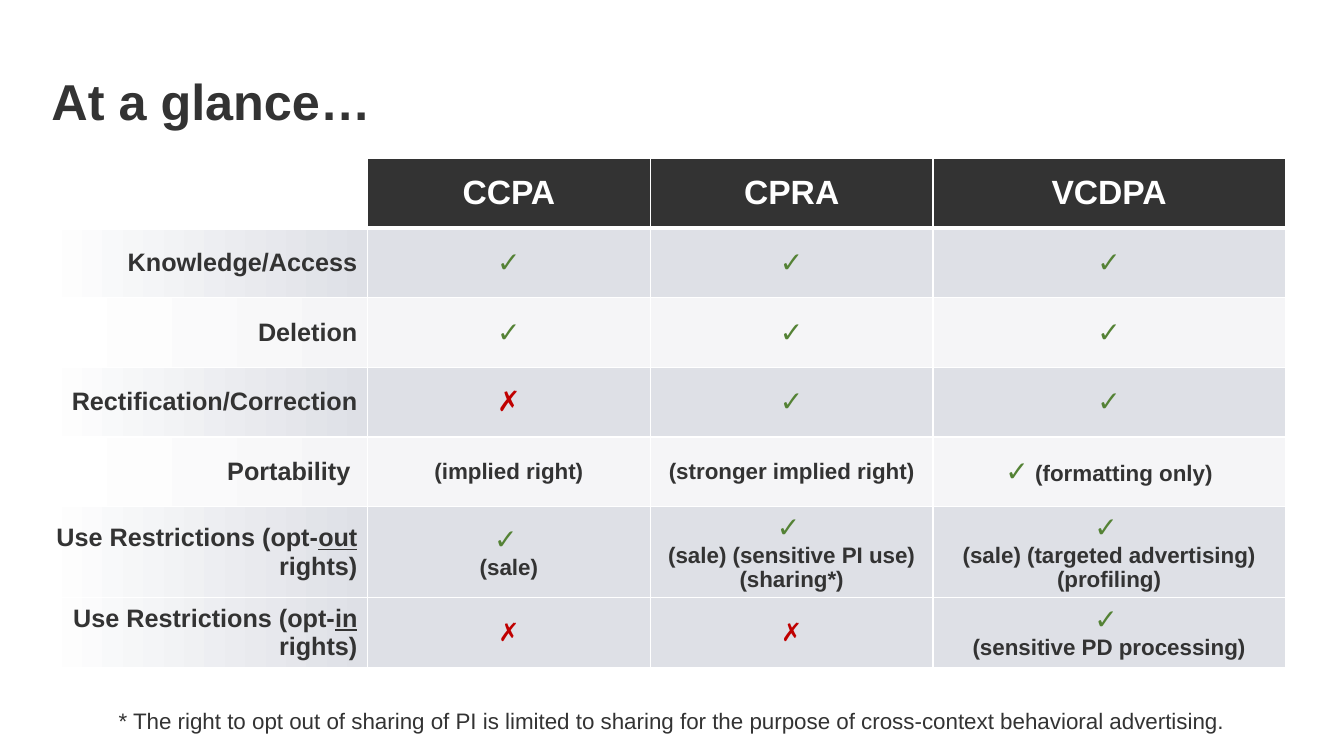
from dataclasses import dataclass

from lxml.etree import SubElement
from pptx import Presentation
from pptx.dml.color import RGBColor
from pptx.enum.text import MSO_ANCHOR as Anchor, MSO_AUTO_SIZE as AutoSize, PP_ALIGN as Align
from pptx.oxml import parse_xml
from pptx.oxml.ns import nsdecls, qn
from pptx.util import Pt

# ---- Content ----
TITLE = "At a glance…"
FOOTNOTE = ("* The right to opt out of sharing of PI is limited to sharing for the "
            "purpose of cross-context behavioral advertising.")
LAWS = ["CCPA", "CPRA", "VCDPA"]

# A cell is a list of (text, style) parts; BREAK starts a new line
BREAK = ("\n", None)
YES, NO, SMALL_NO = ("✓", "yes"), ("✗", "no"), ("✗", "small_no")


def yes_with(detail):
    return [YES, (" ", "note"), BREAK, (detail, "note")]


def restrictions(option):
    return [("Use Restrictions (opt-", "label"), (option, "underlined"), (" rights)", "label")]


# (label, band, one cell per law)
RIGHTS = [
    ([("Knowledge/Access", "label")], "dark", [[YES], [YES], [YES]]),
    ([("Deletion", "label")], "light", [[YES], [YES], [YES]]),
    ([("Rectification/Correction", "label")], "dark", [[NO], [YES], [YES]]),
    ([("Portability ", "label")], "light", [
        [("(implied right)", "note")],
        [("(stronger implied right)", "note")],
        [YES, (" (formatting only)", "note")]]),
    (restrictions("out"), "dark", [
        yes_with("(sale)"),
        yes_with("(sale) (sensitive PI use) (sharing*)"),
        yes_with("(sale) (targeted advertising) (profiling)")]),
    (restrictions("in"), "dark", [
        [SMALL_NO], [SMALL_NO], yes_with("(sensitive PD processing)")]),
]


# ---- Theme ----
@dataclass(frozen=True)
class Theme:
    font: str = "Arial"
    ink: str = "333333"
    white: str = "FFFFFF"
    green: str = "548235"
    red: str = "C00000"
    dark: str = "DEE0E6"
    light: str = "F5F5F7"
    title: int = 36
    header: int = 24
    mark: int = 20
    label: int = 18
    note: int = 16


theme = Theme()
STYLES = {  # size, colour
    "header": (theme.header, theme.white),
    "label": (theme.label, theme.ink),
    "underlined": (theme.label, theme.ink),
    "note": (theme.note, theme.ink),
    "yes": (theme.mark, theme.green),
    "no": (theme.mark, theme.red),
    "small_no": (theme.label, theme.red),
}

# ---- Layout, in points ----
SLIDE_SIZE = (960, 540)
TITLE_BOX = (29.5, 29.5, 780, 90)
FOOTNOTE_BOX = (36.5, 148.5, 886.5, 391.5)
FOOTNOTE_INSET = 15.5
TABLE_LEFT, TABLE_TOP = 29.5, 113
COLUMN_WIDTHS = (233, 202, 202, 251.5)
ROW_HEIGHT = 49.8
GRID_LINE, HEADER_LINE = 1, 3


def rgb(code):
    return RGBColor.from_string(code)


def style_font(font, size, color, bold=True):
    font.name, font.size, font.bold = theme.font, Pt(size), bold
    font.color.rgb = rgb(color)


def place(shape, box):
    shape.left, shape.top, shape.width, shape.height = map(Pt, box)


def write_cell(cell, parts, align):
    cell.vertical_anchor = Anchor.MIDDLE
    paragraph = cell.text_frame.paragraphs[0]
    paragraph.alignment = align
    for part in parts:
        if part == BREAK:
            paragraph.add_line_break()
            continue
        text, style = part
        run = paragraph.add_run()
        run.text = text
        style_font(run.font, *STYLES[style])
        if style == "underlined":
            run.font.underline = True


def fill_solid(cell, color):
    cell.fill.solid()
    cell.fill.fore_color.rgb = rgb(color)


def fill_fade(cell, color):
    cell.fill.gradient()
    cell.fill.gradient_angle = 0
    for stop, stop_color, position in zip(cell.fill.gradient_stops, (theme.white, color), (0, 1)):
        stop.color.rgb = rgb(stop_color)
        stop.position = position


def draw_borders(cell, top, bottom):
    properties = cell._tc.get_or_add_tcPr()
    sides = (("lnL", GRID_LINE), ("lnR", GRID_LINE), ("lnT", top), ("lnB", bottom))
    for index, (side, width) in enumerate(sides):
        properties.insert(index, parse_xml(
            f'<a:{side} {nsdecls("a")} w="{Pt(width)}"><a:solidFill>'
            f'<a:srgbClr val="{theme.white}"/></a:solidFill></a:{side}>'))


def write_placeholder(holder, box, text, size, bold, align, anchor):
    place(holder, box)
    frame = holder.text_frame
    frame.text = text
    frame.word_wrap, frame.auto_size, frame.vertical_anchor = True, AutoSize.NONE, anchor
    paragraph = frame.paragraphs[0]
    paragraph.alignment, paragraph.line_spacing = align, 0.9
    paragraph.space_before = Pt(0)
    style_font(paragraph.runs[0].font, size, theme.ink, bold)
    return frame


def main():
    deck = Presentation()
    deck.slide_width, deck.slide_height = map(Pt, SLIDE_SIZE)
    slide = deck.slides.add_slide(deck.slide_layouts[1])

    # Title
    write_placeholder(slide.shapes.title, TITLE_BOX, TITLE, theme.title, True,
                      Align.LEFT, Anchor.MIDDLE)

    # Footnote, at the foot of the body
    footnote = write_placeholder(slide.placeholders[1], FOOTNOTE_BOX, FOOTNOTE, theme.note, False,
                                 Align.CENTER, Anchor.BOTTOM)
    footnote.margin_bottom = Pt(FOOTNOTE_INSET)
    properties = footnote.paragraphs[0]._p.get_or_add_pPr()
    properties.set("marL", "0")
    properties.set("indent", "0")
    SubElement(properties, qn("a:buNone"))

    # Table frame
    row_count = len(RIGHTS) + 1
    table = slide.shapes.add_table(
        row_count, len(COLUMN_WIDTHS), Pt(TABLE_LEFT), Pt(TABLE_TOP),
        Pt(sum(COLUMN_WIDTHS)), Pt(ROW_HEIGHT * row_count)).table
    for column, width in zip(table.columns, COLUMN_WIDTHS):
        column.width = Pt(width)
    for row in table.rows:
        row.height = Pt(ROW_HEIGHT)

    # Header row
    table.cell(0, 0).fill.background()
    for column, law in enumerate(LAWS, start=1):
        write_cell(table.cell(0, column), [(law, "header")], Align.CENTER)
        fill_solid(table.cell(0, column), theme.ink)

    # Rights, one a row
    for row, (label, band, verdicts) in enumerate(RIGHTS, start=1):
        band_color = getattr(theme, band)
        write_cell(table.cell(row, 0), label, Align.RIGHT)
        fill_fade(table.cell(row, 0), band_color)
        for column, verdict in enumerate(verdicts, start=1):
            write_cell(table.cell(row, column), verdict, Align.CENTER)
            fill_solid(table.cell(row, column), band_color)

    # Grid lines, heavier under the header
    for row in range(row_count):
        for column in range(len(COLUMN_WIDTHS)):
            draw_borders(table.cell(row, column),
                         top=HEADER_LINE if row == 1 else GRID_LINE,
                         bottom=HEADER_LINE if row == 0 else GRID_LINE)

    deck.save("out.pptx")


if __name__ == "__main__":
    main()
